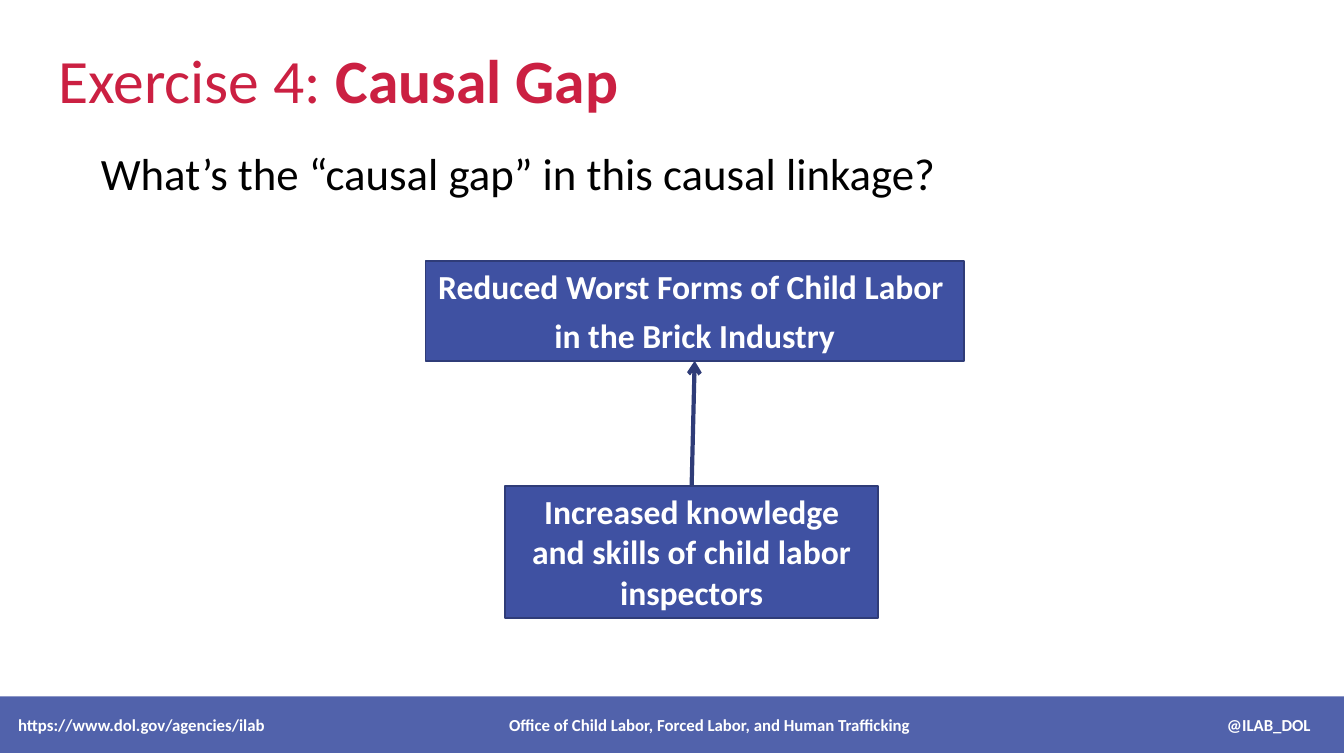
import pptx
import pptx.dml.color
import pptx.enum.shapes
import pptx.enum.text
import pptx.oxml
import pptx.oxml.ns
import pptx.util
from pptx.util import Inches

RGBColor = pptx.dml.color.RGBColor
RED = RGBColor(0xCB, 0x20, 0x42)
BLUE = RGBColor(0x3F, 0x51, 0xA2)
NAVY = RGBColor(0x2F, 0x3C, 0x78)
BLACK = RGBColor(0, 0, 0)
WHITE = RGBColor(0xFF, 0xFF, 0xFF)
ALIGN = pptx.enum.text.PP_ALIGN
ANCHOR = pptx.enum.text.MSO_ANCHOR


def format_text(frame, size, color, align, bold=None):
    frame.word_wrap = True
    for para in frame.paragraphs:
        para.alignment = align
        for span in para.runs:
            span.font.name = "Calibri"
            span.font.size = pptx.util.Pt(size)
            span.font.color.rgb = color
            if bold is not None:
                span.font.bold = bold


def add_box(left, top, width, height, text):
    box = slide.shapes.add_shape(
        pptx.enum.shapes.MSO_SHAPE.RECTANGLE,
        Inches(left), Inches(top), Inches(width), Inches(height))
    box.shadow.inherit = False
    box.fill.solid()
    box.fill.fore_color.rgb = BLUE
    box.line.color.rgb = NAVY
    box.line.width = pptx.util.Pt(1)
    box.text_frame.text = text
    box.text_frame.vertical_anchor = ANCHOR.TOP
    return box


deck = pptx.Presentation()
deck.slide_width = Inches(13.33)
deck.slide_height = Inches(7.5)
slide = deck.slides.add_slide(deck.slide_layouts[1])

# Title and question
title = slide.shapes.title
title.left, title.top = Inches(0.48), Inches(0.47)
title.width, title.height = Inches(9.25), Inches(0.62)
title.text_frame.text = "Exercise 4: "
title.text_frame.paragraphs[0].add_run().text = "Causal Gap"
title.text_frame.vertical_anchor = ANCHOR.MIDDLE
format_text(title.text_frame, 44, RED, ALIGN.LEFT)
title.text_frame.paragraphs[0].runs[1].font.bold = True

question = slide.placeholders[1]
question.left, question.top = Inches(0.9), Inches(1.26)
question.width, question.height = Inches(9.58), Inches(0.91)
question.text_frame.text = "What’s the “causal gap” in this causal linkage?"
question.text_frame.vertical_anchor = ANCHOR.MIDDLE
format_text(question.text_frame, 32, BLACK, ALIGN.LEFT)
question_para = question.text_frame.paragraphs[0]
question_para.space_before = pptx.util.Pt(0)
question_props = question_para._p.get_or_add_pPr()
question_props.set("marL", "0")
question_props.set("indent", "0")
pptx.oxml.ns.qn("a:buNone")
question_props.append(question_props.makeelement(pptx.oxml.ns.qn("a:buNone")))

# Causal linkage
outcome = add_box(4.22, 2.59, 5.34, 0.99,
                  "Reduced Worst Forms of Child Labor \nin the Brick Industry")
output = add_box(5.01, 4.82, 3.7, 1.31,
                 "Increased knowledge and skills of child labor inspectors")
for box in (outcome, output):
    format_text(box.text_frame, 24, WHITE, ALIGN.CENTER, True)
outcome.text_frame.word_wrap = False
outcome.text_frame.paragraphs[1].space_before = pptx.util.Pt(6)

arrow = slide.shapes.add_connector(
    pptx.enum.shapes.MSO_CONNECTOR.STRAIGHT,
    Inches(6.86), Inches(4.82), Inches(6.89), Inches(3.58))
arrow.begin_connect(output, 0)
arrow.end_connect(outcome, 2)
arrow.line.color.rgb = NAVY
arrow.line.width = pptx.util.Pt(3)
arrow_line = arrow.line._get_or_add_ln()
arrow_line.append(arrow_line.makeelement(pptx.oxml.ns.qn("a:tailEnd"), {"type": "arrow"}))
arrow_props = arrow._element.spPr
arrow_props.append(arrow_props.makeelement(pptx.oxml.ns.qn("a:effectLst")))

# Footer bar: left, centred and right texts separated by tab stops
footer = add_box(0, 6.91, 13.33, 0.56,
                 "https://www.dol.gov/agencies/ilab\t"
                 "Office of Child Labor, Forced Labor, and Human Trafficking\t@ILAB_DOL")
footer.line.fill.background()
footer.text_frame.vertical_anchor = ANCHOR.MIDDLE
footer.text_frame.margin_left = Inches(0.18)
format_text(footer.text_frame, 12, WHITE, ALIGN.LEFT, True)
footer_color = footer.fill._xPr.find(".//" + pptx.oxml.ns.qn("a:srgbClr"))
footer_color.append(footer_color.makeelement(pptx.oxml.ns.qn("a:alpha"), {"val": "90000"}))
footer_props = footer.text_frame.paragraphs[0]._p.get_or_add_pPr()
tab_list = footer_props.makeelement(pptx.oxml.ns.qn("a:tabLst"))
footer_props.append(tab_list)
for position, align in ((6.86, "ctr"), (12.82, "r")):
    tab_list.append(tab_list.makeelement(
        pptx.oxml.ns.qn("a:tab"), {"pos": str(Inches(position)), "algn": align}))

deck.save("out.pptx")
